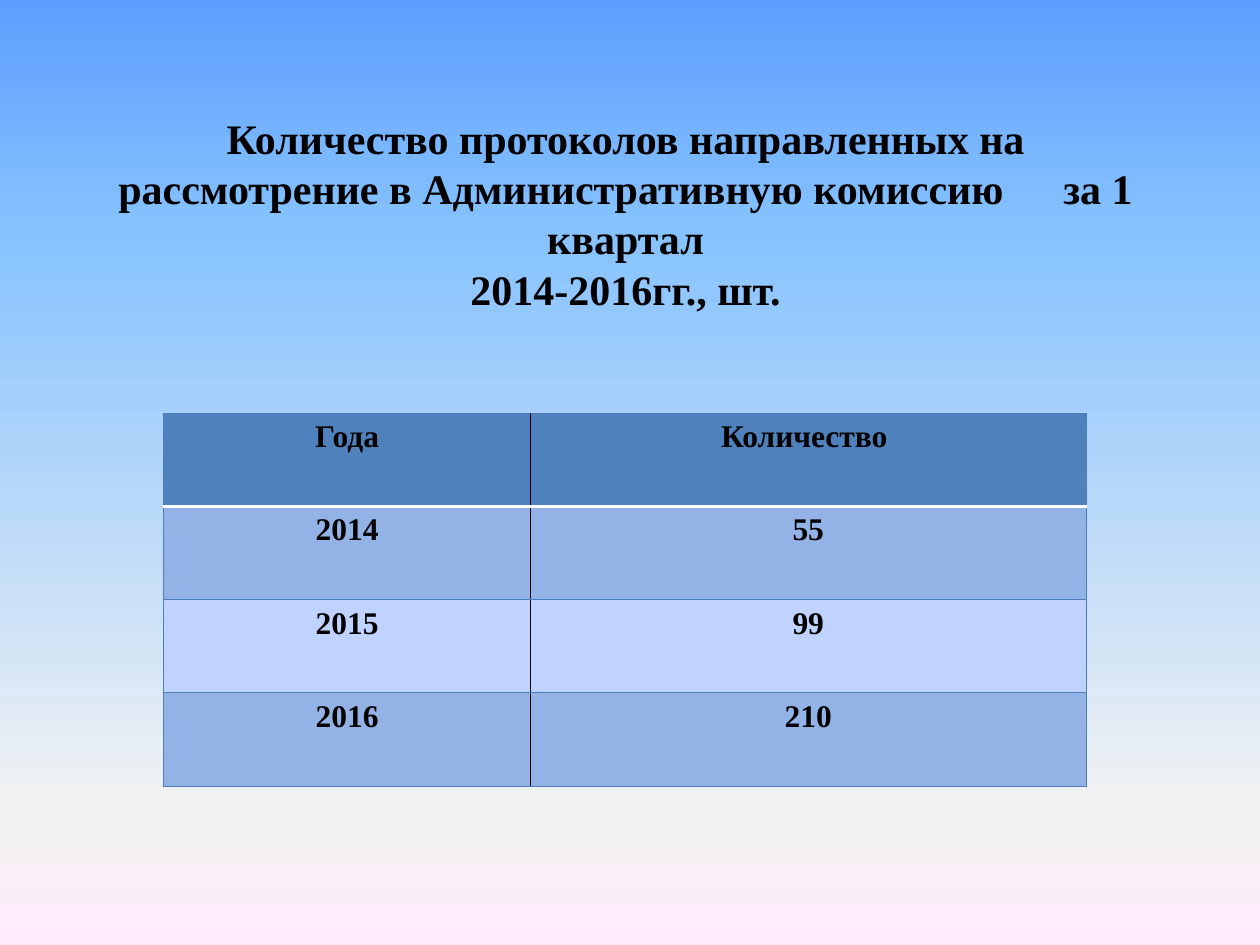
from lxml.etree import SubElement
from pptx import Presentation
from pptx.dml.color import RGBColor
from pptx.enum.text import MSO_AUTO_SIZE as AutoSize, PP_ALIGN as Align
from pptx.oxml.ns import qn
from pptx.util import Inches, Pt

TITLE = [
    "Количество протоколов направленных на рассмотрение в Административную комиссию\tза 1 квартал",
    "2014-2016гг., шт.",
]
ROWS = [("Года", "Количество "), ("2014", "55"), ("2015", "99"), ("2016", "210")]
COLUMN_WIDTHS = [2.91, 4.41]
ROW_HEIGHT = 0.74
THEME = {
    "font": "Times New Roman",
    "text": "000000",
    "title_size": 24,
    "table_size": 18,
    "header": "4F81BD",
    "bands": ["C0D3FF", "93B2E5"],
    "edge": ("4B7EBC", 0.75),
    "divider": ("000000", 1),
    "header_rule": ("FFFFFF", 2),
    "background": [(0, "5E9EFF"), (24, "85C2FF"), (86, "F2F2F2"), (100, "FFEBFA")],
}


def paint_background(slide):
    """Fill the slide with the vertical gradient."""
    fill = slide.background.fill
    fill.gradient()
    fill.gradient_angle = 270
    stops = next(slide.element.iter(qn("a:gsLst")))
    for stop in list(stops):
        stops.remove(stop)
    for position, color in THEME["background"]:
        stop = SubElement(stops, qn("a:gs"), pos=str(position * 1000))
        SubElement(stop, qn("a:srgbClr"), val=color)


def add_text(paragraph, text, size):
    """Write one centred bold run."""
    paragraph.alignment = Align.CENTER
    run = paragraph.add_run()
    run.text = text
    run.font.name = THEME["font"]
    run.font.size = Pt(size)
    run.font.bold = True
    run.font.color.rgb = RGBColor.from_string(THEME["text"])


def add_title(slide):
    """Add the heading above the table."""
    shape = slide.shapes.add_textbox(Inches(0.75), Inches(0.84), Inches(8.43), Inches(1.72))
    frame = shape.text_frame
    frame.word_wrap = True
    frame.auto_size = AutoSize.SHAPE_TO_FIT_TEXT
    for index, text in enumerate(TITLE):
        paragraph = frame.add_paragraph() if index else frame.paragraphs[0]
        add_text(paragraph, text, THEME["title_size"])


def set_borders(cell, row, column):
    """Draw the four borders that suit the cell's place in the grid."""
    borders = {
        "a:lnL": "divider" if column else "edge",
        "a:lnR": "edge" if column else "divider",
        "a:lnT": "header_rule" if row == 1 else "edge",
        "a:lnB": "edge" if row else "header_rule",
    }
    properties = cell._tc.get_or_add_tcPr()
    for side, style in borders.items():
        color, width = THEME[style]
        line = SubElement(properties, qn(side), w=str(Pt(width)))
        SubElement(SubElement(line, qn("a:solidFill")), qn("a:srgbClr"), val=color)


def add_protocol_table(slide):
    """Add the table of protocols by year."""
    table = slide.shapes.add_table(
        len(ROWS), len(COLUMN_WIDTHS), Inches(1.3), Inches(3.28),
        Inches(sum(COLUMN_WIDTHS)), Inches(ROW_HEIGHT * len(ROWS)),
    ).table
    table.horz_banding = False
    for column, width in enumerate(COLUMN_WIDTHS):
        table.columns[column].width = Inches(width)
    for row, texts in enumerate(ROWS):
        table.rows[row].height = Inches(ROW_HEIGHT)
        color = THEME["bands"][row % 2] if row else THEME["header"]
        for column, text in enumerate(texts):
            cell = table.cell(row, column)
            set_borders(cell, row, column)
            cell.fill.solid()
            cell.fill.fore_color.rgb = RGBColor.from_string(color)
            add_text(cell.text_frame.paragraphs[0], text, THEME["table_size"])


def main():
    """Build and save the slide."""
    presentation = Presentation()
    presentation.slide_width = Inches(10)
    presentation.slide_height = Inches(7.5)
    slide = presentation.slides.add_slide(presentation.slide_layouts[6])
    paint_background(slide)
    add_title(slide)
    add_protocol_table(slide)
    presentation.save("out.pptx")


if __name__ == "__main__":
    main()
